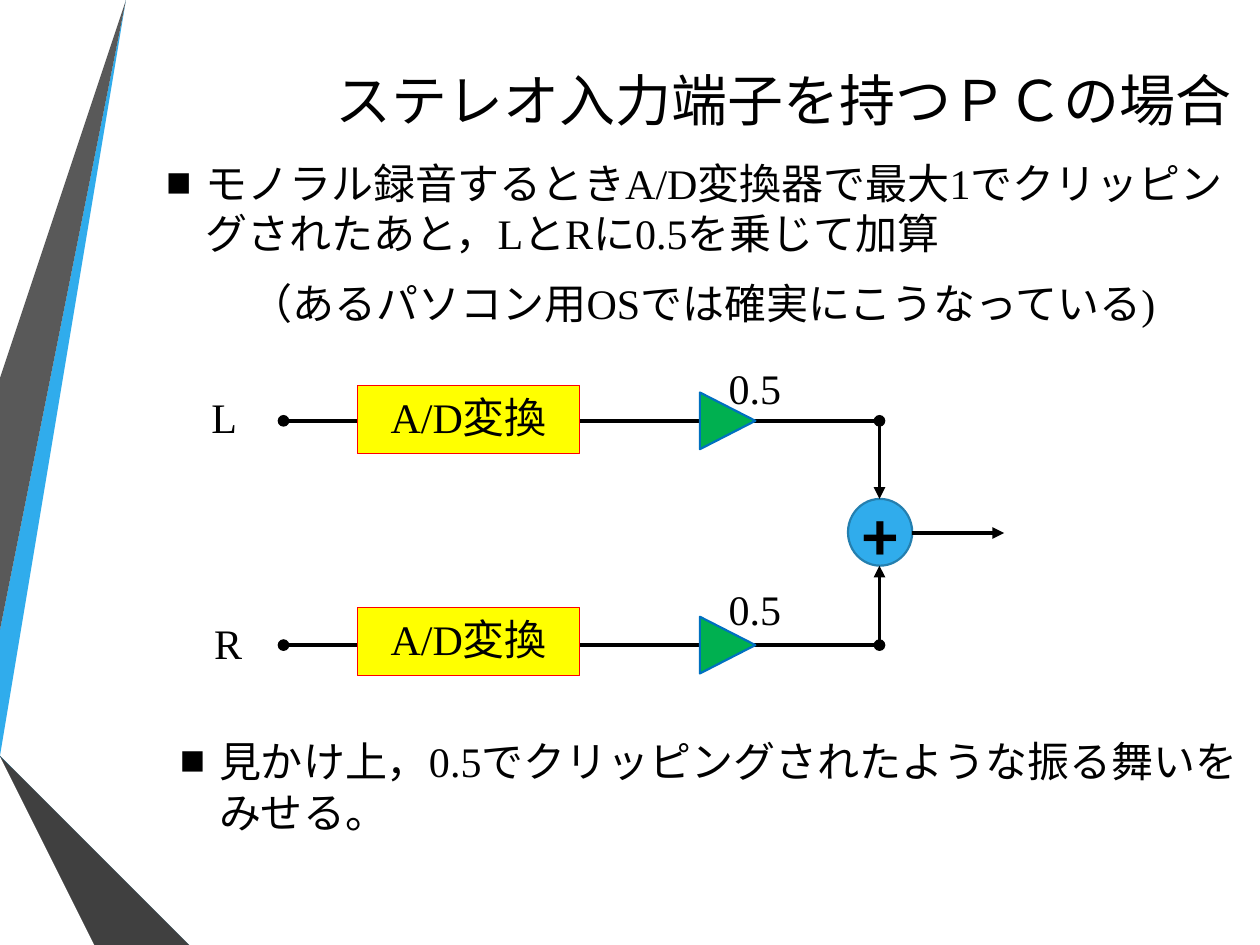
import pptx
import pptx.dml.color
import pptx.enum.shapes
import pptx.enum.text
import pptx.oxml
import pptx.oxml.ns
import pptx.util
from lxml import etree

Inches = pptx.util.Inches
Pt = pptx.util.Pt
RGBColor = pptx.dml.color.RGBColor
Shape = pptx.enum.shapes.MSO_SHAPE
Align = pptx.enum.text.PP_ALIGN
Anchor = pptx.enum.text.MSO_ANCHOR
qn = pptx.oxml.ns.qn

BLACK = RGBColor(0x00, 0x00, 0x00)
BLUE = RGBColor(0x30, 0xAC, 0xEC)
BLUE_EDGE = RGBColor(0x24, 0x7F, 0xAF)
MID_BLUE = RGBColor(0x12, 0x87, 0xC3)
DEEP_BLUE = RGBColor(0x0C, 0x5A, 0x82)
LIGHT_GRAY = RGBColor(0x59, 0x59, 0x59)
GRAY = RGBColor(0x40, 0x40, 0x40)
DARK_GRAY = RGBColor(0x26, 0x26, 0x26)
YELLOW = RGBColor(0xFF, 0xFF, 0x00)
RED = RGBColor(0xFF, 0x00, 0x00)
GREEN = RGBColor(0x00, 0xB0, 0x50)
GREEN_EDGE = RGBColor(0x00, 0x70, 0xC0)

TITLE_FONT = {"name": "Calibri", "size": Pt(32)}
BODY_FONT = {"name": "Times New Roman", "size": Pt(24)}
SUM_FONT = {"name": "Calibri", "size": Pt(40), "bold": True}
BODY_SPACING = {"space_before": Pt(4.8), "space_after": Pt(6)}
CENTERED = {"alignment": Align.CENTER, **BODY_SPACING}
NO_INSETS = {f"margin_{side}": 0 for side in ("left", "top", "right", "bottom")}

# Side decoration, from back to front: colour and outline
RIBBONS = [
    (BLUE, [(0, 5.44), (0, 5.75), (0.22, 5.79), (1.17, 0), (0.89, 0)]),
    (LIGHT_GRAY, [(0.83, 0), (0.55, 0), (0, 3.36), (0, 5.06)]),
    (DARK_GRAY, [(0, 6.19), (0, 6.21), (0.93, 7.5), (0.99, 7.5)]),
    (DEEP_BLUE, [(0, 5.79), (0, 5.8), (1.56, 7.5), (1.63, 7.5)]),
    (MID_BLUE, [(0, 5.79), (1.63, 7.5), (2.33, 7.5), (0.22, 5.79), (0, 5.75)]),
    (GRAY, [(0, 6.19), (0.99, 7.5), (1.51, 7.5), (0, 5.86)]),
]

# Channels: name, label left and top, signal height, box top, gain label top
CHANNELS = [
    ("L", 1.32, 3.11, 3.34, 3.06, 2.88),
    ("R", 1.35, 4.9, 5.12, 4.82, 4.63),
]
SUM_X, SUM_Y = 6.98, 4.23
SUM_TOP, SUM_BOTTOM = 3.96, 4.49


def set_values(target, values):
    for name, value in values.items():
        setattr(target, name, value)


def write(paragraph, text, font, layout):
    run = paragraph.add_run()
    run.text = text
    set_values(run.font, font)
    run.font.color.rgb = BLACK
    set_values(paragraph, layout)


def indent(paragraph, left, bullet=False):
    properties = paragraph._p.get_or_add_pPr()
    properties.set("marL", str(Inches(left)))
    properties.set("indent", str(-Inches(left) if bullet else 0))
    if bullet:
        color = etree.SubElement(properties, qn("a:buClr"))
        etree.SubElement(color, qn("a:srgbClr")).set("val", str(BLACK))
        etree.SubElement(properties, qn("a:buFont")).set("typeface", BODY_FONT["name"])
        etree.SubElement(properties, qn("a:buChar")).set("char", "■")


def add_text_box(slide, box, frame_values=None):
    frame = slide.shapes.add_textbox(*map(Inches, box)).text_frame
    set_values(frame, {"word_wrap": True, **(frame_values or {})})
    return frame


def add_label(slide, text, left, top):
    frame = add_text_box(slide, (left, top, 0.92, 0.4),
                         {"vertical_anchor": Anchor.MIDDLE, **NO_INSETS})
    write(frame.paragraphs[0], text, BODY_FONT, CENTERED)


def paint(shape, fill, edge=None, width=0):
    shape.shadow.inherit = False
    shape.fill.solid()
    shape.fill.fore_color.rgb = fill
    if edge is None:
        shape.line.fill.background()
    else:
        set_values(shape.line, {"width": Pt(width)})
        shape.line.color.rgb = edge


def add_block(slide, kind, box, fill, edge, width):
    shape = slide.shapes.add_shape(kind, *map(Inches, box))
    paint(shape, fill, edge, width)
    return shape


def add_ribbon(slide, color, points):
    builder = slide.shapes.build_freeform(*points[0], scale=Inches(1))
    builder.add_line_segments(points[1:], close=True)
    paint(builder.convert_to_shape(), color)


def add_wire(slide, start, end, tail, head=None):
    wire = slide.shapes.add_connector(
        pptx.enum.shapes.MSO_CONNECTOR.STRAIGHT, *map(Inches, start + end))
    wire.line.width = Pt(2.25)
    wire.line.color.rgb = BLACK
    properties = wire._element.spPr
    line = properties.find(qn("a:ln"))
    for tag, kind in (("a:headEnd", head), ("a:tailEnd", tail)):
        if kind:
            etree.SubElement(line, qn(tag)).set("type", kind)
    etree.SubElement(properties, qn("a:effectLst"))


def add_channel(slide, name, label_left, label_top, y, box_top, gain_top):
    add_wire(slide, (2.25, y), (SUM_X, y), "oval", "oval")
    converter = add_block(slide, Shape.RECTANGLE, (2.84, box_top, 1.76, 0.54),
                          YELLOW, RED, 0.75)
    converter.text_frame.vertical_anchor = Anchor.TOP
    write(converter.text_frame.paragraphs[0], "A/D変換", BODY_FONT, CENTERED)
    amplifier = add_block(slide, Shape.ISOSCELES_TRIANGLE, (5.55, y - 0.22, 0.45, 0.44),
                          GREEN, GREEN_EDGE, 1.25)
    amplifier.rotation = 90
    add_label(slide, "0.5", 5.53, gain_top)
    add_label(slide, name, label_left, label_top)


def add_adder(slide):
    adder = add_block(slide, Shape.OVAL, (6.73, SUM_TOP, 0.51, 0.53),
                      BLUE, BLUE_EDGE, 1.25)
    set_values(adder.text_frame, {"vertical_anchor": Anchor.MIDDLE, **NO_INSETS})
    write(adder.text_frame.paragraphs[0], "+", SUM_FONT, {"alignment": Align.CENTER})
    add_wire(slide, (SUM_X, CHANNELS[0][3]), (SUM_X, SUM_TOP), "triangle")
    add_wire(slide, (SUM_X, CHANNELS[1][3]), (SUM_X, SUM_BOTTOM), "triangle")
    add_wire(slide, (7.24, SUM_Y), (7.97, SUM_Y), "triangle")


def add_bullet_text(slide, box, text):
    frame = add_text_box(slide, box)
    write(frame.paragraphs[0], text, BODY_FONT, BODY_SPACING)
    indent(frame.paragraphs[0], 0.31, bullet=True)
    return frame


def main():
    presentation = pptx.Presentation()
    set_values(presentation, {"slide_width": Inches(10), "slide_height": Inches(7.5)})
    slide = presentation.slides.add_slide(presentation.slide_layouts[6])

    for color, points in RIBBONS:
        add_ribbon(slide, color, points)

    # Title and explanation
    title = add_text_box(slide, (1.45, 0.36, 8.43, 0.85),
                         {"vertical_anchor": Anchor.MIDDLE})
    write(title.paragraphs[0], "ステレオ入力端子を持つＰＣの場合", TITLE_FONT,
          {"alignment": Align.RIGHT})
    body = add_bullet_text(
        slide, (1.22, 1.2, 8.65, 1.47),
        "モノラル録音するときA/D変換器で最大1でクリッピングされたあと，LとRに0.5を乗じて加算")
    note = body.add_paragraph()
    write(note, "（あるパソコン用OSでは確実にこうなっている)", BODY_FONT, BODY_SPACING)
    indent(note, 0.67)

    # Signal flow
    for channel in CHANNELS:
        add_channel(slide, *channel)
    add_adder(slide)

    # Conclusion
    add_bullet_text(slide, (1.33, 5.79, 8.65, 1.03),
                    "見かけ上，0.5でクリッピングされたような振る舞いをみせる。")
    presentation.save("out.pptx")


if __name__ == "__main__":
    main()
